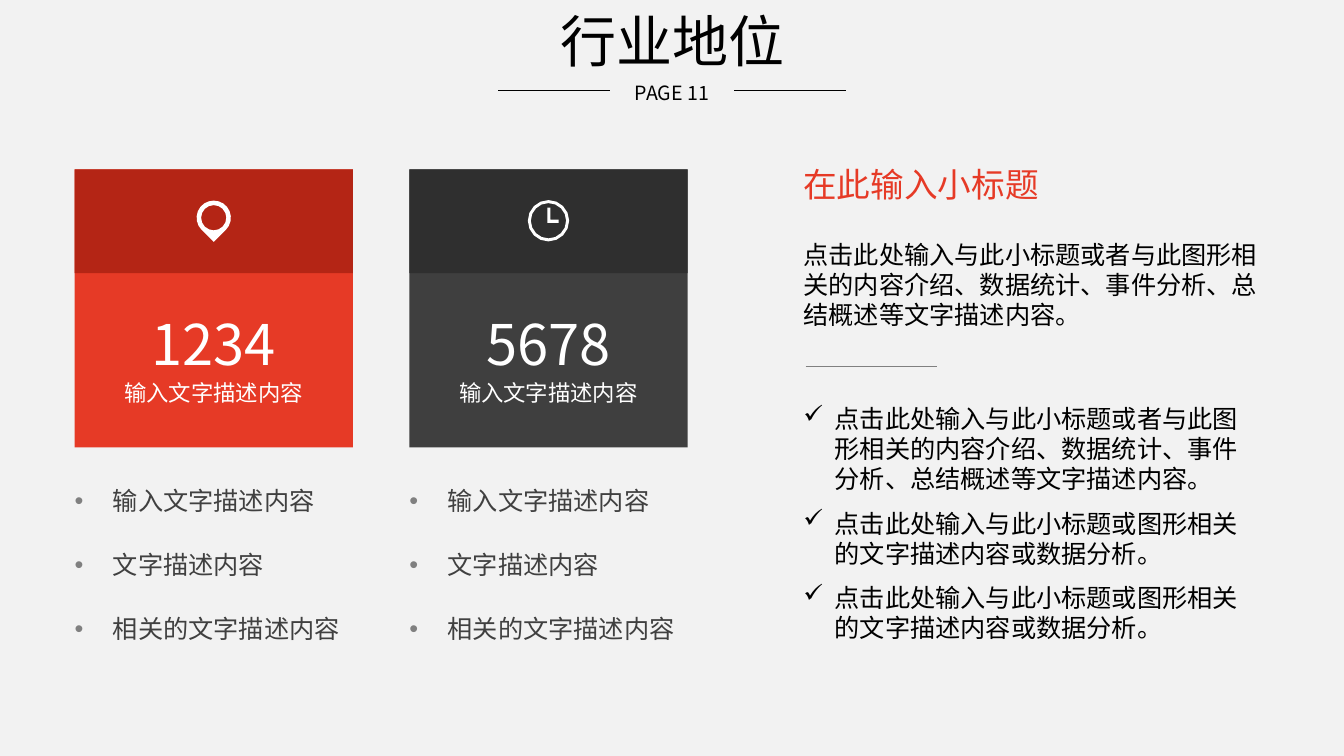
from math import cos, pi, sin

from lxml import etree
from pptx import Presentation
from pptx.dml.color import RGBColor
from pptx.enum.shapes import MSO_CONNECTOR, MSO_SHAPE
from pptx.enum.text import MSO_ANCHOR, MSO_AUTO_SIZE, PP_ALIGN
from pptx.oxml.ns import qn
from pptx.util import Inches, Pt

RECT, STRAIGHT = MSO_SHAPE.RECTANGLE, MSO_CONNECTOR.STRAIGHT
CENTER, LEFT = PP_ALIGN.CENTER, PP_ALIGN.LEFT
MIDDLE, NO_FIT = MSO_ANCHOR.MIDDLE, MSO_AUTO_SIZE.NONE

W, H = 13.33, 7.5
FONT, TITLE_FONT = "Noto Sans CJK SC", "Noto Sans CJK JP"
COLORS = {
    "back": "F2F2F2", "black": "000000", "white": "FFFFFF", "gray": "808080",
    "text": "404040", "red": "E63A26", "deep_red": "B42515",
    "dark": "3F3F3F", "deep_dark": "2F2F2F",
}
CARD, HEAD, PITCH = 2.76, 1.03, 3.32
CARD_LEFT, CARD_TOP = 0.74, 1.68

CAPTION = "输入文字描述内容"
CARD_POINTS = [CAPTION, "文字描述内容", "相关的文字描述内容"]
INTRO = "点击此处输入与此小标题或者与此图形相关的内容介绍、数据统计、事件分析、总结概述等文字描述内容。"
SHORT = "点击此处输入与此小标题或图形相关的文字描述内容或数据分析。"


def rgb(name):
    return RGBColor.from_string(COLORS[name])


def style_run(r, size, color, font=FONT):
    for key, value in {"size": Pt(size), "name": font}.items():
        setattr(r.font, key, value)
    r.font.color.rgb = rgb(color)
    etree.SubElement(r.font._element, qn("a:ea"), typeface=font)


def add_bullet(p, char, font, indent, color):
    pPr = p._p.get_or_add_pPr()
    pPr.set("marL", str(Inches(indent)))
    pPr.set("indent", str(-Inches(indent)))
    bu_color = etree.SubElement(pPr, qn("a:buClr"))
    etree.SubElement(bu_color, qn("a:srgbClr"), val=COLORS[color])
    etree.SubElement(pPr, qn("a:buFont"), typeface=font)
    etree.SubElement(pPr, qn("a:buChar"), char=char)


def add_text(s, box, lines, size, color, align=LEFT, side=0.1, after=0, bullet=None):
    tf = s.shapes.add_textbox(*map(Inches, box)).text_frame
    frame = {"word_wrap": True, "auto_size": NO_FIT,
             "margin_left": Inches(side), "margin_right": Inches(side)}
    for key, value in frame.items():
        setattr(tf, key, value)
    for i, line in enumerate(lines):
        p = tf.add_paragraph() if i else tf.paragraphs[0]
        p.alignment, p.space_after = align, Pt(after)
        if bullet:
            add_bullet(p, *bullet)
        r = p.add_run()
        r.text = line
        style_run(r, size, color)


def paint(sp, color):
    sp.shadow.inherit = False
    sp.fill.solid()
    sp.fill.fore_color.rgb = rgb(color)
    sp.line.fill.background()


def add_rect(s, box, color):
    paint(s.shapes.add_shape(RECT, *map(Inches, box)), color)


def add_rule(s, x, y, width, color):
    line = s.shapes.add_connector(STRAIGHT, Inches(x), Inches(y), Inches(x + width), Inches(y))
    line.line.color.rgb = rgb(color)
    line.line.width = Pt(0.5)
    etree.SubElement(line._element.spPr, qn("a:effectLst"))


# Icons: outlines in inches around a centre
def arc(radius, start=0, sweep=360, steps=16):
    angles = [(start + sweep * i / steps) * pi / 180 for i in range(steps + 1)]
    return [(radius * cos(a), radius * sin(a)) for a in angles]


def pin_outlines():
    return [arc(0.17, 135, 270) + [(0, 0.24)], arc(0.125)]


def clock_outlines():
    hands = [(-0.01, -0.13), (0.02, -0.13), (0.02, -0.01),
             (0.1, -0.01), (0.1, 0.02), (-0.01, 0.02)]
    return [arc(0.205), arc(0.175), hands]


def add_icon(s, cx, cy, outlines):
    points = [[(Inches(cx + x), Inches(cy + y)) for x, y in o] for o in outlines]
    builder = s.shapes.build_freeform(*points[0][0])
    for i, outline in enumerate(points):
        if i:
            builder.move_to(*outline[0])
        builder.add_line_segments(outline[1:], close=True)
    paint(builder.convert_to_shape(), "white")


# Title with page number between two rules
def add_heading(s, title):
    sp = s.shapes.title
    box = {"left": 4.54, "top": -0.04, "width": 4.26, "height": 0.96}
    for key, value in box.items():
        setattr(sp, key, Inches(value))
    tf = sp.text_frame
    for key, value in {"word_wrap": False, "auto_size": NO_FIT, "vertical_anchor": MIDDLE}.items():
        setattr(tf, key, value)
    p = tf.paragraphs[0]
    p.alignment, p.line_spacing = CENTER, 0.9
    r = p.add_run()
    r.text = title
    style_run(r, 40, "black", TITLE_FONT)
    add_text(s, (W / 2 - 0.95, 0.75, 1.9, 0.34), ["PAGE 11"], 14, "black", CENTER)
    for x in (4.94, 7.28):
        add_rule(s, x, 0.9, 1.11, "black")


# Figure card with its list below
def add_card(s, x, y, number, color, head_color, outlines, icon_y):
    add_rect(s, (x, y, CARD, CARD), color)
    add_rect(s, (x, y, CARD, HEAD), head_color)
    add_icon(s, x + CARD / 2, y + icon_y, outlines)
    add_text(s, (x, y + 1.34, CARD, 0.77), [number], 40, "white", CENTER)
    add_text(s, (x, y + 2.03, CARD, 0.37), [CAPTION], 16, "white", CENTER)
    add_text(s, (x, y + 3.09, CARD, 1.68), CARD_POINTS, 18, "text",
             side=0, after=24, bullet=("•", "Arial", 0.38, "gray"))


# Text column on the right
def add_column(s, x, y, width):
    add_text(s, (x, y, 3.8, 0.5), ["在此输入小标题"], 24, "red")
    add_text(s, (x, y + 0.74, width, 1.01), [INTRO], 18, "black")
    add_rule(s, x + 0.12, y + 2.05, 1.3, "gray")
    add_text(s, (x, y + 2.37, width, 2.5), [INTRO, SHORT, SHORT], 18, "black",
             after=10, bullet=("✓", "OpenSymbol", 0.31, "black"))


def main():
    prs = Presentation()
    prs.slide_width, prs.slide_height = Inches(W), Inches(H)
    s = prs.slides.add_slide(prs.slide_layouts[5])
    s.background.fill.solid()
    s.background.fill.fore_color.rgb = rgb("back")
    add_heading(s, "行业地位")
    cards = [("1234", "red", "deep_red", pin_outlines(), 0.48),
             ("5678", "dark", "deep_dark", clock_outlines(), 0.51)]
    for i, card in enumerate(cards):
        add_card(s, CARD_LEFT + i * PITCH, CARD_TOP, *card)
    add_column(s, 7.87, 1.58, 4.74)
    prs.save("out.pptx")


if __name__ == "__main__":
    main()
